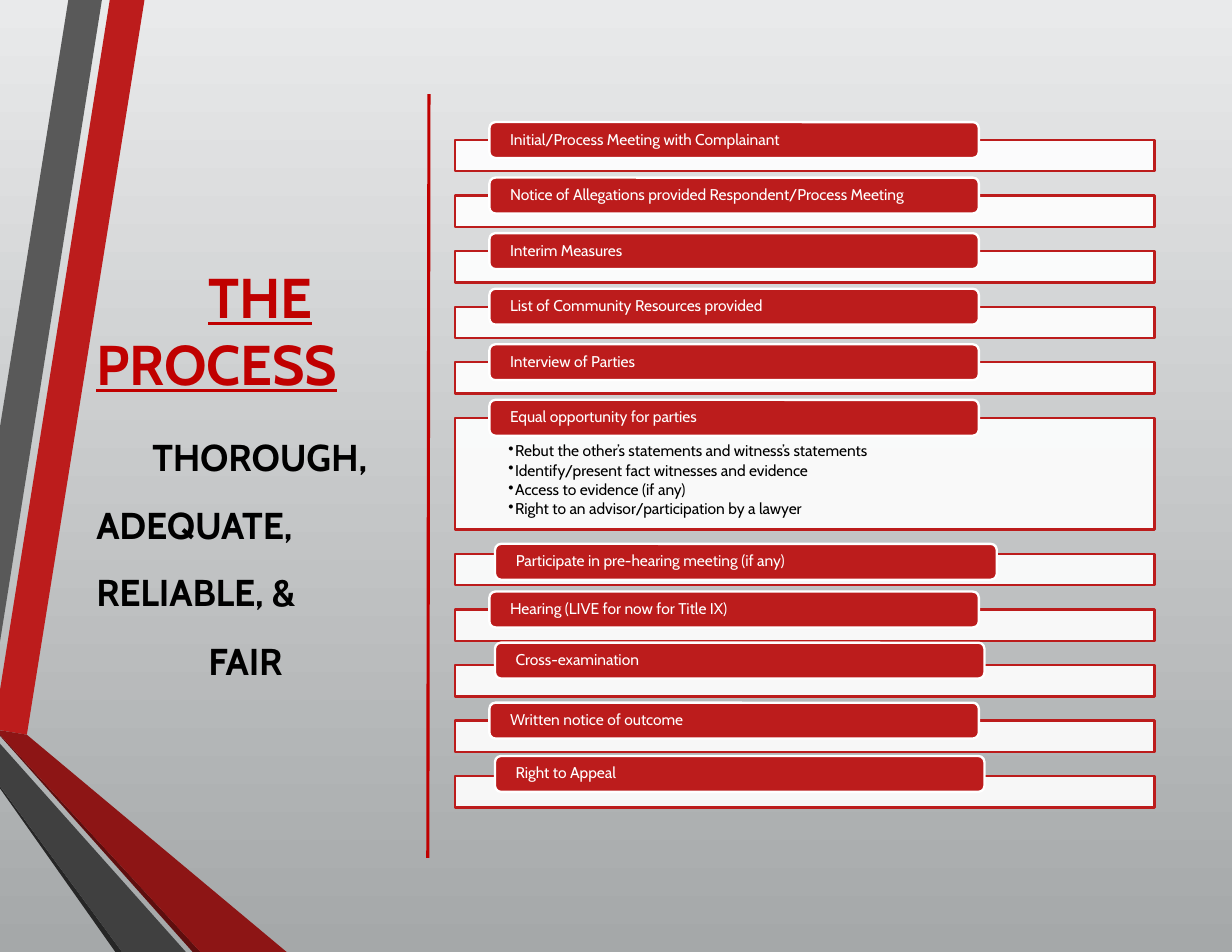
from dataclasses import dataclass

from lxml import etree
from pptx import Presentation
from pptx.dml.color import RGBColor
from pptx.enum.shapes import MSO_CONNECTOR, MSO_SHAPE
from pptx.enum.text import MSO_ANCHOR, MSO_AUTO_SIZE, PP_ALIGN
from pptx.oxml.ns import qn
from pptx.util import Inches, Pt

STRAIGHT = MSO_CONNECTOR.STRAIGHT
RECTANGLE, ROUNDED = MSO_SHAPE.RECTANGLE, MSO_SHAPE.ROUNDED_RECTANGLE
TOP, MIDDLE = MSO_ANCHOR.TOP, MSO_ANCHOR.MIDDLE
LEFT = PP_ALIGN.LEFT
NO_AUTOFIT = MSO_AUTO_SIZE.NONE


@dataclass(frozen=True)
class Theme:
    font: str = "Cabin"
    red: str = "BC1C1C"
    accent: str = "C00000"
    maroon: str = "8D1515"
    dark_maroon: str = "5E0E0E"
    gray: str = "595959"
    charcoal: str = "404040"
    near_black: str = "262626"
    white: str = "FFFFFF"
    black: str = "000000"
    background: tuple = ("E9EAEB", "A5A8A9")
    title_size: int = 36
    motto_size: int = 24
    step_size: int = 10


THEME = Theme()

# Decorative bands, back to front: colour and outline in inches
RIBBONS = [
    (THEME.red, [(0, 6.16), (0, 6.52), (0.24, 6.56), (1.29, 0), (0.98, 0)]),
    (THEME.gray, [(0.91, 0), (0.61, 0), (0, 3.81), (0, 5.73)]),
    (THEME.near_black, [(0, 7.02), (0, 7.04), (1.03, 8.5), (1.09, 8.5)]),
    (THEME.dark_maroon, [(0, 6.56), (0, 6.57), (1.72, 8.5), (1.79, 8.5)]),
    (THEME.maroon, [(0, 6.56), (1.79, 8.5), (2.56, 8.5), (0.24, 6.56), (0, 6.52)]),
    (THEME.charcoal, [(0, 7.02), (1.09, 8.5), (1.66, 8.5), (0, 6.64)]),
]

STEPS = [
    "Initial/Process Meeting with Complainant",
    "Notice of Allegations provided Respondent/Process Meeting",
    "Interim Measures",
    "List of Community Resources provided",
    "Interview of Parties",
    "Equal opportunity for parties",
    "Participate in pre-hearing meeting (if any)",
    "Hearing (LIVE for now for Title IX)",
    "Cross-examination",
    "Written notice of outcome",
    "Right to Appeal",
]
DETAILS = {
    "Equal opportunity for parties": [
        "Rebut the other’s statements and witness’s statements",
        "Identify/present fact witnesses and evidence",
        "Access to evidence (if any)",
        "Right to an advisor/participation by a lawyer",
    ],
}
# Labels set apart from the rest: left offset, rise above the frame, width
DEFAULT_LABEL = (0.31, 0.16, 4.37)
SHIFTED_LABELS = {
    "Participate in pre-hearing meeting (if any)": (0.36, 0.09, 4.48),
    "Cross-examination": (0.36, 0.2, 4.37),
    "Right to Appeal": (0.36, 0.18, 4.37),
}


def color(value):
    return RGBColor.from_string(value)


def write(shape, paragraphs, *, size, ink, bold=False, underline=False, indents=(0,),
          spacing=1.0, before=0, after=0, insets=(0, 0, 0, 0), anchor=TOP,
          tracking=0, bullet=False):
    """Fill a shape with paragraphs; indents gives each first-line indent."""
    frame = shape.text_frame
    frame.auto_size = NO_AUTOFIT
    frame.word_wrap = True
    frame.vertical_anchor = anchor
    (frame.margin_left, frame.margin_top,
     frame.margin_right, frame.margin_bottom) = map(Inches, insets)
    for index, text in enumerate(paragraphs):
        paragraph = frame.paragraphs[0] if index == 0 else frame.add_paragraph()
        paragraph.alignment = LEFT
        paragraph.line_spacing = spacing
        paragraph.space_before, paragraph.space_after = Pt(before), Pt(after)
        run = paragraph.add_run()
        run.text = text
        font = run.font
        font.name, font.size, font.bold = THEME.font, Pt(size), bold
        font.underline = underline
        font.color.rgb = color(ink)
        if tracking:
            run._r.get_or_add_rPr().set("spc", str(tracking))
        properties = paragraph._p.get_or_add_pPr()
        indent = -0.06 if bullet else indents[index % len(indents)]
        properties.set("marL", str(Inches(0.06 if bullet else 0.01)))
        properties.set("indent", str(Inches(indent)))
        if bullet:
            etree.SubElement(properties, qn("a:buChar")).set("char", "•")


def paint(shape, fill, line=None):
    shape.shadow.inherit = False
    shape.fill.solid()
    shape.fill.fore_color.rgb = color(fill)
    if line:
        shape.line.color.rgb = color(line)
        shape.line.width = Pt(1.5)
    else:
        shape.line.fill.background()


def add_block(slide, kind, box, fill, line):
    shape = slide.shapes.add_shape(kind, *map(Inches, box))
    paint(shape, fill, line)
    return shape


def set_background(slide):
    fill = slide.background.fill
    fill.gradient()
    fill.gradient_angle = 270
    for stop, value in zip(fill.gradient_stops, THEME.background):
        stop.color.rgb = color(value)


def add_ribbons(slide, left, top):
    for fill, outline in RIBBONS:
        points = [(Inches(left + x), Inches(top + y)) for x, y in outline]
        builder = slide.shapes.build_freeform(*points[0])
        builder.add_line_segments(points[1:], close=True)
        paint(builder.convert_to_shape(), fill)


def add_heading(slide, left, top, width):
    # The title placeholder goes in front of the bands
    title = slide.shapes.title
    slide.shapes._spTree.append(title._element)
    title.left, title.top, title.width, title.height = map(Inches, (left, top, width, 1.23))
    write(title, ["THE PROCESS"], size=THEME.title_size, ink=THEME.accent, bold=True,
          underline=True, indents=(1,), before=1, insets=(0, 0.01, 0, 0), tracking=-10)
    motto = slide.shapes.add_textbox(*map(Inches, (left, top + 1.34, 2.7, 2.39)))
    write(motto, ["THOROUGH, ADEQUATE, RELIABLE, &", "FAIR"], size=THEME.motto_size,
          ink=THEME.black, bold=True, indents=(0.5, 1), spacing=1.5, before=1,
          insets=(0, 0.01, 0, 0), tracking=-10)


def add_divider(slide, left, top, width, height):
    line = slide.shapes.add_connector(
        STRAIGHT, *map(Inches, (left + width, top, left, top + height)))
    line.line.color.rgb = color(THEME.accent)
    line.line.width = Pt(2)
    etree.SubElement(line._element.spPr, qn("a:effectLst"))


def add_steps(slide, left, top, width, height):
    heights = [1 if step in DETAILS else 0.28 for step in STEPS]
    gap = (height - sum(heights)) / (len(STEPS) - 1)
    for step, frame_height in zip(STEPS, heights):
        # Pale frame, with details where the step has them
        frame = add_block(slide, RECTANGLE, (left, top, width, frame_height),
                          THEME.white, THEME.red)
        solid = frame.fill._xPr.find(qn("a:solidFill"))
        etree.SubElement(solid[0], qn("a:alpha")).set("val", "90000")
        if step in DETAILS:
            write(frame, DETAILS[step], size=THEME.step_size, ink=THEME.black,
                  spacing=0.9, after=1.5, insets=(0.48, 0.23, 0.48, 0.08), bullet=True)
        # Red label over the frame's upper edge
        offset, rise, label_width = SHIFTED_LABELS.get(step, DEFAULT_LABEL)
        label = add_block(slide, ROUNDED, (left + offset, top - rise, label_width, 0.32),
                          THEME.red, THEME.white)
        write(label, [step], size=THEME.step_size, ink=THEME.white, spacing=0.9,
              insets=(0.16, 0, 0.16, 0), anchor=MIDDLE)
        top += frame_height + gap


def main():
    presentation = Presentation()
    presentation.slide_width, presentation.slide_height = Inches(11), Inches(8.5)
    slide = presentation.slides.add_slide(presentation.slide_layouts[5])
    set_background(slide)
    add_ribbons(slide, 0, 0)
    add_heading(slide, 0.85, 2.33, 2.98)
    add_divider(slide, 3.82, 0.84, 0.01, 6.82)
    add_steps(slide, 4.06, 1.25, 6.25, 5.96)
    presentation.save("out.pptx")


if __name__ == "__main__":
    main()
